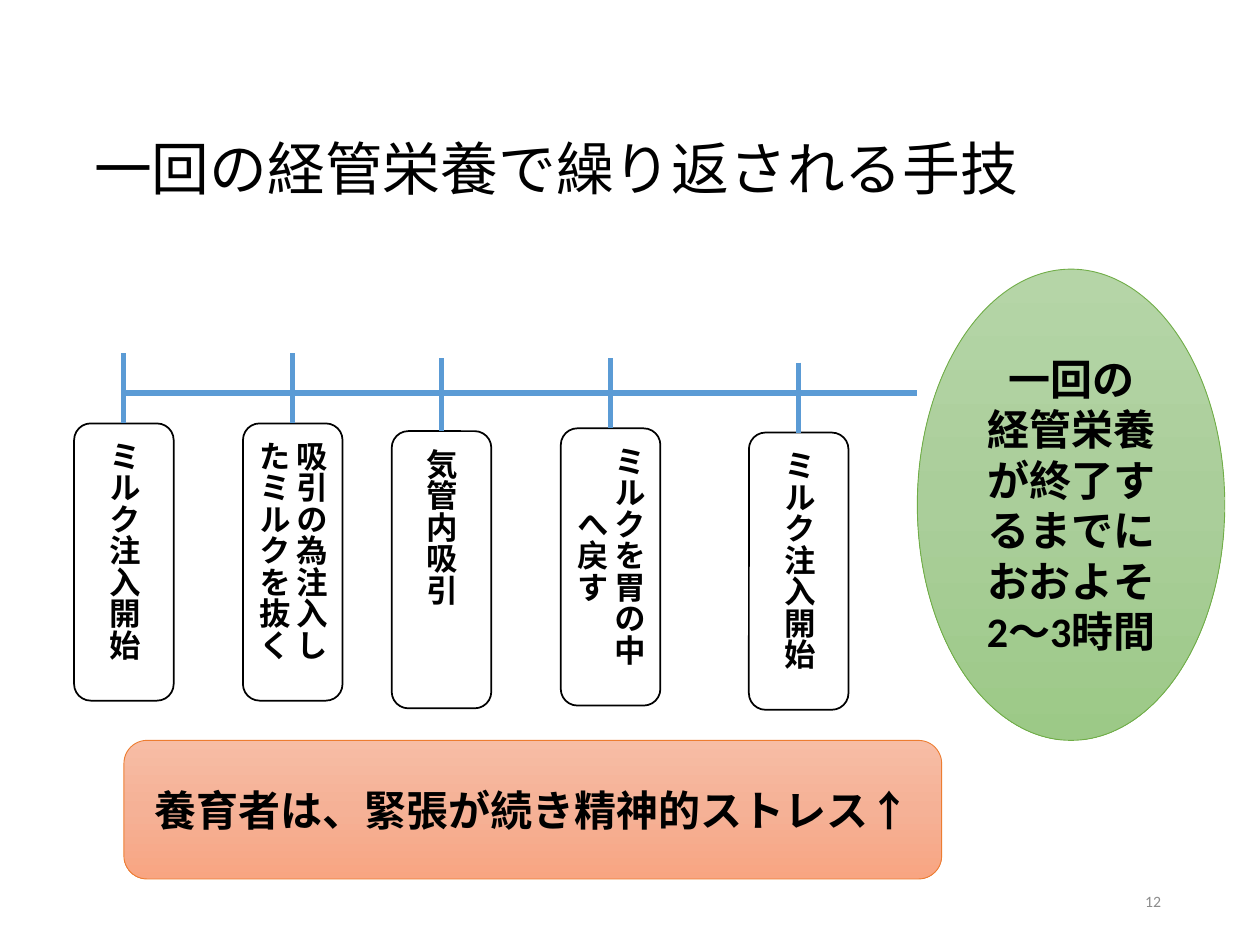
from copy import deepcopy
from dataclasses import dataclass

from pptx import Presentation
from pptx.dml.color import RGBColor
from pptx.enum.shapes import MSO_CONNECTOR, MSO_SHAPE
from pptx.enum.text import MSO_ANCHOR, PP_ALIGN
from pptx.oxml.ns import qn
from pptx.util import Pt


@dataclass(frozen=True)
class Theme:
    font: str = "Calibri"
    ink: str = "000000"
    paper: str = "FFFFFF"
    muted: str = "8C8C8C"
    timeline: str = "5B9BD5"
    green_line: str = "70AD47"
    green_fill: tuple = ("B5D5A7", "AACE9A", "9CC987")
    orange_line: str = "ED7D31"
    orange_fill: tuple = ("F7BDA5", "F5B196", "F8A582")
    title_size: float = 33
    emphasis_size: float = 24
    step_size: float = 18
    number_size: float = 9


THEME = Theme()
STEP_WIDTH, STEP_HEIGHT = 56.9, 158.4
TIMELINE_Y = 224.6

# Text, centre, top of the tick, top of the box
STEPS = [
    ("ミルク注入開始", 70.8, 202, 242),
    ("吸引の為注入したミルクを抜く", 167.3, 202, 242),
    ("気管内吸引", 252.3, 204.8, 246.4),
    ("ミルクを胃の中へ戻す", 348.9, 204.8, 244.8),
    ("ミルク注入開始", 456.4, 207.2, 247.2),
]


def color(code):
    return RGBColor.from_string(code)


def write(frame, lines, size, ink=THEME.ink, bold=False, align=PP_ALIGN.CENTER):
    frame.word_wrap = True
    frame.vertical_anchor = MSO_ANCHOR.MIDDLE
    frame.text = "\n".join(lines)
    for paragraph in frame.paragraphs:
        paragraph.alignment = align
        paragraph.font.name = THEME.font
        paragraph.font.size = Pt(size)
        paragraph.font.bold = bold
        paragraph.font.color.rgb = color(ink)


def add_label(slide, box, text, size, ink, align):
    label = slide.shapes.add_textbox(*map(Pt, box))
    write(label.text_frame, [text], size, ink, align=align)
    return label


def add_panel(slide, preset, box, lines, size, outline, width):
    panel = slide.shapes.add_shape(preset, *map(Pt, box))
    panel.shadow.inherit = False
    panel.line.color.rgb = color(outline)
    panel.line.width = Pt(width)
    write(panel.text_frame, lines, size, bold=True)
    return panel


def fill_downward(panel, codes):
    """Fill with three evenly spaced colours from top to bottom."""
    panel.fill.gradient()
    panel.fill.gradient_angle = 270
    stops = panel._element.spPr.find(qn("a:gradFill")).find(qn("a:gsLst"))
    stops.insert(1, deepcopy(stops[0]))
    for index, (stop, code) in enumerate(zip(panel.fill.gradient_stops, codes)):
        stop.position = index / 2
        stop.color.rgb = color(code)


def add_timeline_stroke(slide, start, end):
    stroke = slide.shapes.add_connector(
        MSO_CONNECTOR.STRAIGHT, *map(Pt, (*start, *end)))
    stroke.line.color.rgb = color(THEME.timeline)
    stroke.line.width = Pt(3)
    properties = stroke._element.spPr
    properties.append(properties.makeelement(qn("a:effectLst"), {}))
    return stroke


def add_step(slide, text, center, tick_top, box_top):
    """Add a vertical text box hung from the timeline by a tick."""
    box = (center - STEP_WIDTH / 2, box_top, STEP_WIDTH, STEP_HEIGHT)
    step = add_panel(slide, MSO_SHAPE.ROUNDED_RECTANGLE, box, [text],
                     THEME.step_size, THEME.ink, 1)
    step.fill.solid()
    step.fill.fore_color.rgb = color(THEME.paper)
    step.text_frame._txBody.bodyPr.set("vert", "eaVert")
    tick = add_timeline_stroke(slide, (center, tick_top), (center, box_top))
    tick.end_connect(step, 0)


def main():
    deck = Presentation()
    deck.slide_width, deck.slide_height = Pt(720), Pt(540)
    slide = deck.slides.add_slide(deck.slide_layouts[6])

    title = add_label(slide, (46.8, 61.9, 623.5, 72),
                      "一回の経管栄養で繰り返される手技",
                      THEME.title_size, THEME.ink, PP_ALIGN.LEFT)
    title.text_frame.paragraphs[0].line_spacing = 0.9

    add_timeline_stroke(slide, (STEPS[0][1], TIMELINE_Y), (524.2, TIMELINE_Y))
    for step in STEPS:
        add_step(slide, *step)

    duration = add_panel(
        slide, MSO_SHAPE.OVAL, (524.2, 153.8, 175.7, 269.3),
        ["一回の", "経管栄養が終了するまでにおおよそ", "2～3時間"],
        THEME.emphasis_size, THEME.green_line, 0.5)
    fill_downward(duration, THEME.green_fill)

    stress = add_panel(
        slide, MSO_SHAPE.ROUNDED_RECTANGLE, (70.8, 423.1, 467.3, 79.2),
        ["養育者は、緊張が続き精神的ストレス↑"],
        THEME.emphasis_size, THEME.orange_line, 0.5)
    fill_downward(stress, THEME.orange_fill)

    add_label(slide, (508.5, 500.5, 162, 28.8), "12",
              THEME.number_size, THEME.muted, PP_ALIGN.RIGHT)
    deck.save("out.pptx")


if __name__ == "__main__":
    main()
